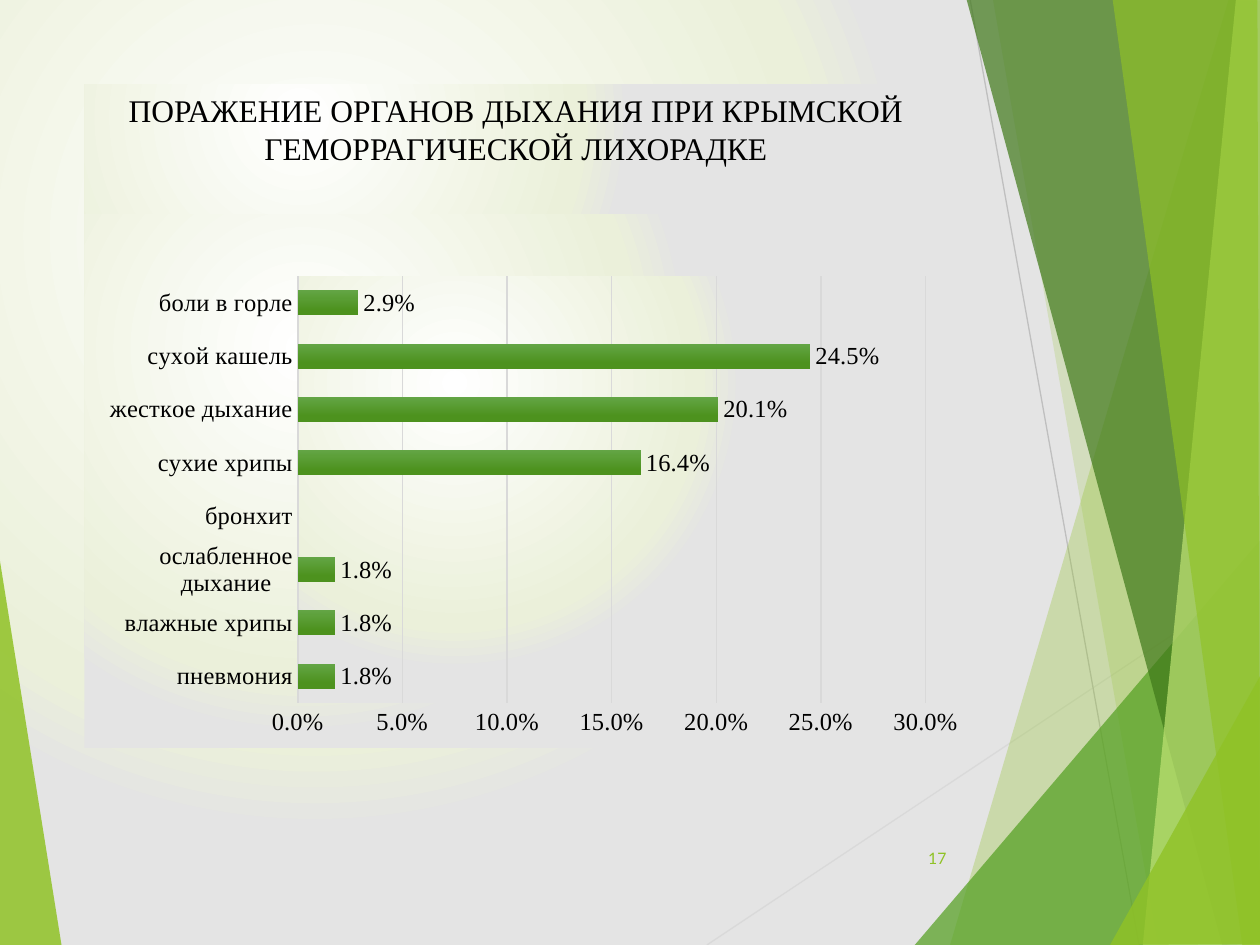
from lxml import etree
from pptx import Presentation
from pptx.chart.data import CategoryChartData
from pptx.dml.color import RGBColor
from pptx.enum.chart import XL_CHART_TYPE as Chart, XL_LABEL_POSITION as LabelPos, XL_TICK_MARK as Tick
from pptx.enum.shapes import MSO_CONNECTOR as Connector
from pptx.enum.text import MSO_ANCHOR as Anchor, PP_ALIGN as Align
from pptx.oxml import parse_xml
from pptx.oxml.ns import nsdecls, qn
from pptx.util import Inches, Pt

COLORS = {
    "text": "000000", "lime": "90C226", "green": "54A021", "forest": "3F7819",
    "pale": "C0E474", "grid": "D9D9D9", "line": "BFBFBF",
    "bar_top": "63A545", "bar_bottom": "4D921E",
}
GLOW_STOPS = [(0, "FFFFFF"), (64, "EBF0DA"), (76, "E4E4E4")]
SERIF = "Times New Roman"

# Colour, opacity in percent, corners in inches
FACETS = [
    ("lime", 85, [(-0.01, 4.39), (0.49, 7.51), (-0.01, 7.5)]),
    ("lime", 30, [(9.75, 0), (7.54, 7.5), (10.02, 7.51), (10.01, 0.01)]),
    ("lime", 20, [(7.88, -0.01), (9.19, 7.5), (10.01, 7.5), (10.01, -0.01)]),
    ("green", 72, [(7.26, 7.5), (10, 4.29), (10.01, 7.5)]),
    ("forest", 70, [(7.67, -0.01), (9.7, 7.5), (10.01, 7.49), (10.01, -0.01)]),
    ("pale", 70, [(9.81, -0.01), (9.07, 7.5), (10.01, 7.5), (10, -0.01)]),
    ("lime", 65, [(8.83, -0.01), (9.86, 7.5), (10, 7.5), (9.98, -0.01)]),
    ("lime", 80, [(8.81, 7.5), (10.01, 5.35), (10.01, 7.49)]),
]
RAYS = [("grid", (5.61, 7.5), (10.01, 4.57)), ("line", (7.7, 0), (9.04, 7.5))]
SYMPTOMS = [
    ("пневмония", 0.018), ("влажные хрипы", 0.018), ("ослабленное дыхание", 0.018),
    ("бронхит", None), ("сухие хрипы", 0.164), ("жесткое дыхание", 0.201),
    ("сухой кашель", 0.245), ("боли в горле", 0.029),
]


def rgb(name):
    return RGBColor.from_string(COLORS[name])


def glow():
    """Return a round gradient centred a quarter of the way in."""
    stops = "".join(
        f'<a:gs pos="{pos * 1000}"><a:srgbClr val="{color}"/></a:gs>' for pos, color in GLOW_STOPS)
    return parse_xml(
        f'<a:gradFill {nsdecls("a")} rotWithShape="1"><a:gsLst>{stops}</a:gsLst>'
        '<a:path path="circle"><a:fillToRect l="50000" t="50000" r="100000" b="100000"/></a:path>'
        '</a:gradFill>')


def set_glow(fill, owner):
    """Give owner's fill the glow, keeping its place in the XML."""
    fill.solid()
    solid = next(owner.iter(qn("a:solidFill")))
    solid.getparent().replace(solid, glow())


def glow_properties():
    """Return chart shape properties filled with the glow."""
    props = parse_xml(f'<c:spPr {nsdecls("c", "a")}/>')
    props.append(glow())
    etree.SubElement(etree.SubElement(props, qn("a:ln")), qn("a:noFill"))
    return props


def set_font(font, size, name=SERIF, color="text"):
    font.size, font.name, font.bold = Pt(size), name, False
    font.color.rgb = rgb(color)


def write_text(tf, text, size, align, anchor, **font):
    tf.word_wrap = True
    tf.vertical_anchor = anchor
    p = tf.paragraphs[0]
    p.alignment = align
    r = p.add_run()
    r.text = text
    set_font(r.font, size, **font)


def place(sp, box):
    sp.left, sp.top, sp.width, sp.height = map(Inches, box)


def add_ray(s, color, start, end):
    ray = s.shapes.add_connector(Connector.STRAIGHT, *map(Inches, start + end))
    ray.line.color.rgb = rgb(color)
    ray.line.width = Pt(0.75)
    etree.SubElement(ray._element.spPr, qn("a:effectLst"))


def add_facet(s, color, opacity, corners):
    first, *rest = [(Inches(x), Inches(y)) for x, y in corners]
    builder = s.shapes.build_freeform(*first)
    builder.add_line_segments(rest, close=True)
    sp = builder.convert_to_shape()
    sp.shadow.inherit = False
    sp.line.fill.background()
    sp.fill.solid()
    sp.fill.fore_color.rgb = rgb(color)
    tint = next(sp._element.spPr.iter(qn("a:srgbClr")))
    etree.SubElement(tint, qn("a:alpha"), val=str(opacity * 1000))


def add_backdrop(s):
    set_glow(s.background.fill, s._element)
    add_facet(s, *FACETS[0])
    for ray in RAYS:
        add_ray(s, *ray)
    for facet in FACETS[1:]:
        add_facet(s, *facet)


def add_title(s, box):
    title = s.shapes.title
    place(title, box)
    set_glow(title.fill, title._element)
    write_text(title.text_frame, "ПОРАЖЕНИЕ ОРГАНОВ ДЫХАНИЯ ПРИ КРЫМСКОЙ ГЕМОРРАГИЧЕСКОЙ ЛИХОРАДКЕ",
               18, Align.CENTER, Anchor.TOP)
    s.shapes._spTree.append(title._element)  # bring in front of the backdrop


def add_page_number(s, box):
    sp = s.shapes.add_textbox(*map(Inches, box))
    write_text(sp.text_frame, "17", 9, Align.RIGHT, Anchor.MIDDLE, name="Lato", color="lime")


def format_axes(chart):
    cat, val = chart.category_axis, chart.value_axis
    for axis in (cat, val):
        axis.major_tick_mark = axis.minor_tick_mark = Tick.NONE
        set_font(axis.tick_labels.font, 14)
    cat.format.line.color.rgb = rgb("grid")
    cat.format.line.width = Pt(1)
    val.minimum_scale, val.maximum_scale, val.major_unit = 0, 0.3, 0.05
    val.tick_labels.number_format = "0.0%"
    val.tick_labels.number_format_is_linked = False
    val.format.line.fill.background()
    val.major_gridlines.format.line.color.rgb = rgb("grid")
    val.major_gridlines.format.line.width = Pt(0.75)


def format_bars(plot):
    plot.gap_width, plot.overlap, plot.vary_by_categories = 115, -20, False
    fill = plot.series[0].format.fill
    fill.gradient()
    fill.gradient_angle = 270
    for stop, pos, color in zip(fill.gradient_stops, (0, 0.78), ("bar_top", "bar_bottom")):
        stop.position = pos
        stop.color.rgb = rgb(color)
    plot.has_data_labels = True
    labels = plot.data_labels
    labels.show_value = True
    labels.position = LabelPos.OUTSIDE_END
    labels.number_format, labels.number_format_is_linked = "0.0%", False
    set_font(labels.font, 14)


def set_plot_layout(plot_area, **fractions):
    for old in plot_area.findall(qn("c:layout")):
        plot_area.remove(old)
    sizes = "".join(f'<c:{key} val="{value}"/>' for key, value in fractions.items())
    plot_area.insert(0, parse_xml(
        f'<c:layout {nsdecls("c")}><c:manualLayout><c:layoutTarget val="inner"/>'
        f'<c:xMode val="edge"/><c:yMode val="edge"/>{sizes}</c:manualLayout></c:layout>'))


def add_symptom_chart(s, box):
    data = CategoryChartData(number_format="0.0%")
    data.categories = [name for name, _ in SYMPTOMS]
    data.add_series("Series 1", [share for _, share in SYMPTOMS])
    chart = s.shapes.add_chart(Chart.BAR_CLUSTERED, *map(Inches, box), data).chart
    chart.has_legend = chart.has_title = False
    set_font(chart.font, 14)
    format_axes(chart)
    format_bars(chart.plots[0])
    body = chart._chartSpace.find(qn("c:chart"))
    body.addnext(glow_properties())
    plot_area = body.find(qn("c:plotArea"))
    set_plot_layout(plot_area, x=0.244, y=0.116, w=0.718, h=0.799)
    plot_area.append(glow_properties())


def main():
    prs = Presentation()
    prs.slide_width, prs.slide_height = Inches(10), Inches(7.5)
    s = prs.slides.add_slide(prs.slide_layouts[5])
    add_backdrop(s)
    add_title(s, (0.67, 0.67, 6.85, 1.04))
    add_page_number(s, (7.05, 6.61, 0.56, 0.4))
    add_symptom_chart(s, (0.67, 1.7, 6.94, 4.24))
    prs.save("out.pptx")


if __name__ == "__main__":
    main()
